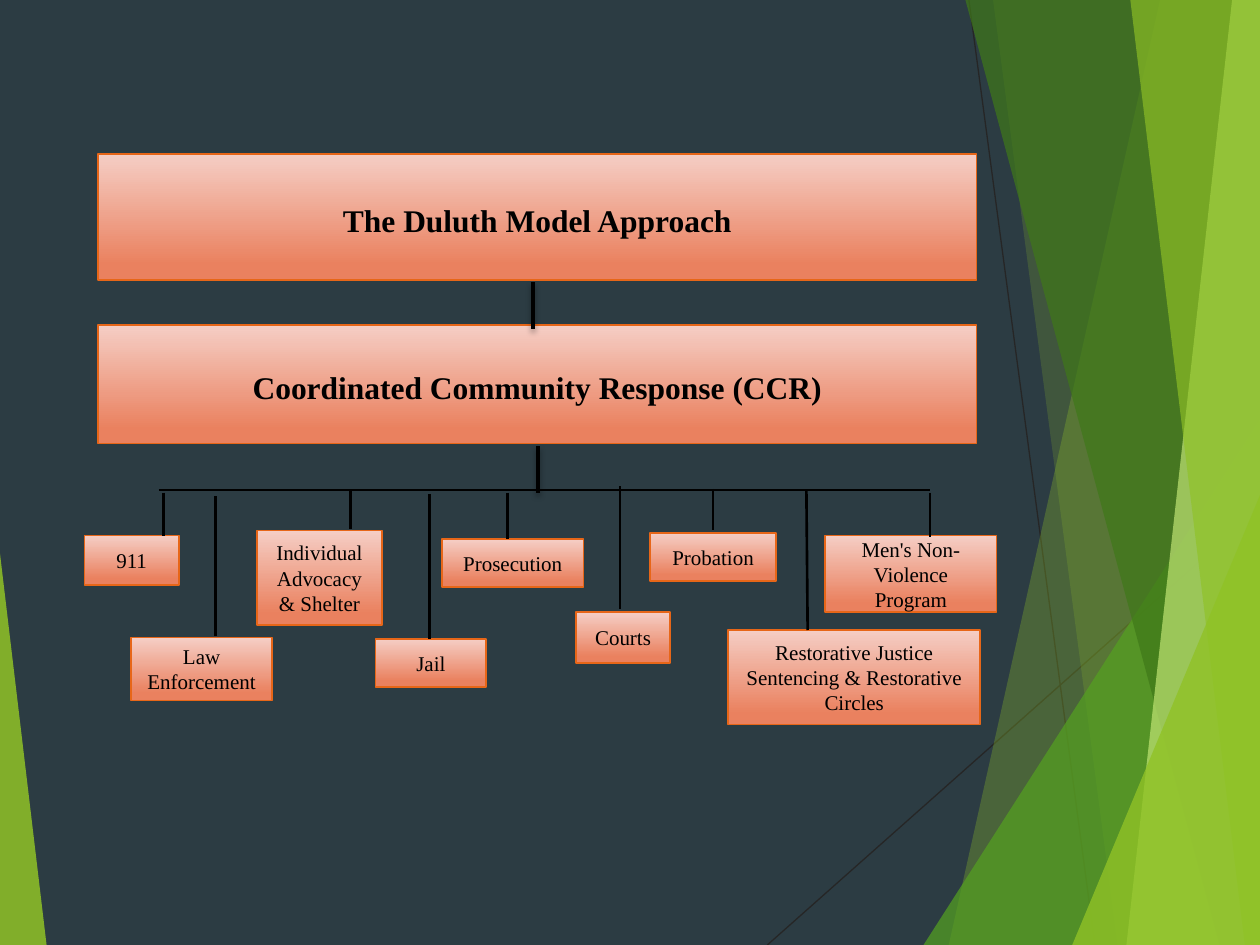
from dataclasses import dataclass

from lxml.etree import SubElement
from pptx import Presentation
from pptx.dml.color import RGBColor
from pptx.enum.shapes import MSO_CONNECTOR, MSO_SHAPE
from pptx.enum.text import MSO_ANCHOR, PP_ALIGN
from pptx.oxml.ns import qn
from pptx.util import Inches, Pt

COLORS = {
    "background": "2C3C43",
    "hairline": "262626",
    "lime": "90C226",
    "green": "54A021",
    "forest": "3F7819",
    "pale": "C0E474",
    "box_top": "F5CEC5",
    "box_bottom": "EA815F",
    "box_edge": "E76618",
    "black": "000000",
}
FONT = "Times New Roman"
TOP, RIGHT, BOTTOM = -0.01, 10, 7.5


@dataclass
class Blade:
    top_x: float
    bottom_x: float
    color: str
    alpha: int


@dataclass
class Corner:
    left: float
    top: float
    width: float
    apex: float
    color: str
    alpha: int


@dataclass
class Box:
    text: str
    left: float
    top: float
    width: float
    height: float
    heading: bool = False


@dataclass
class Line:
    x1: float
    y1: float
    x2: float
    y2: float
    width: float = 1.5
    color: str = "black"
    shadow: bool = False


BACK_LINES = [
    Line(7.69, 0, 8.69, 7.5, 0.75, "hairline"),
    Line(10, 4.03, 6.09, 7.5, 0.75, "hairline"),
]
DECOR = [
    Blade(9.21, 7.53, "lime", 30),
    Blade(7.88, 8.87, "lime", 20),
    Corner(7.33, 3.33, 2.67, 1, "green", 72),
    Blade(7.66, 9.68, "forest", 70),
    Blade(9.78, 8.94, "pale", 70),
    Blade(8.97, 9.88, "lime", 65),
    Corner(8.51, 3.93, 1.49, 1, "lime", 80),
    Corner(0, 4.39, 0.37, 0, "lime", 85),
]
HEADINGS = [
    Box("The Duluth Model Approach", 0.78, 1.22, 6.97, 1, True),
    Box("Coordinated Community Response (CCR)", 0.78, 2.58, 6.97, 0.94, True),
]
TRUNK = [
    Line(4.23, 2.24, 4.23, 2.61, 2, shadow=True),
    Line(4.27, 3.54, 4.27, 3.91, 2, shadow=True),
    Line(1.26, 3.89, 7.38, 3.89),
]
AGENCIES = [
    Box("911", 0.67, 4.25, 0.75, 0.39),
    Box("Law Enforcement", 1.04, 5.06, 1.12, 0.5),
    Box("Individual Advocacy & Shelter", 2.04, 4.21, 0.99, 0.75),
    Box("Jail", 2.98, 5.07, 0.88, 0.38),
    Box("Prosecution", 3.51, 4.28, 1.12, 0.38),
    Box("Courts", 4.57, 4.86, 0.75, 0.4),
    Box("Probation", 5.16, 4.23, 1, 0.38),
    Box("Restorative Justice Sentencing & Restorative Circles", 5.78, 5, 2, 0.75),
    Box("Men's Non-Violence Program", 6.55, 4.25, 1.36, 0.61),
]
BRANCHES = [
    Line(1.3, 3.91, 1.3, 4.25),
    Line(1.71, 3.94, 1.71, 5.05),
    Line(2.78, 3.89, 2.78, 4.2),
    Line(3.41, 3.92, 3.41, 5.07),
    Line(4.03, 3.91, 4.03, 4.28),
    Line(4.92, 3.86, 4.92, 4.83),
    Line(5.66, 3.88, 5.66, 4.21),
    Line(6.4, 3.89, 6.41, 5),
    Line(7.38, 3.91, 7.38, 4.26),
]


def rgb(name: str) -> RGBColor:
    return RGBColor.from_string(COLORS[name])


def set_alpha(clr, percent: int) -> None:
    SubElement(clr, qn("a:alpha"), val=str(percent * 1000))


def draw_line(s, line: Line) -> None:
    c = s.shapes.add_connector(
        MSO_CONNECTOR.STRAIGHT,
        Inches(line.x1), Inches(line.y1), Inches(line.x2), Inches(line.y2),
    )
    c.line.color.rgb = rgb(line.color)
    c.line.width = Pt(line.width)
    effects = SubElement(c._element.spPr, qn("a:effectLst"))
    if line.shadow:
        shadow = SubElement(
            effects, qn("a:outerShdw"), blurRad=str(Pt(3)), dist=str(Pt(2)),
            dir="5400000", rotWithShape="0",
        )
        set_alpha(SubElement(shadow, qn("a:srgbClr"), val=COLORS["black"]), 35)


def draw_decor(s, item: Blade | Corner) -> None:
    if isinstance(item, Blade):
        points = [(RIGHT, TOP), (RIGHT, BOTTOM), (item.bottom_x, BOTTOM)]
        fb = s.shapes.build_freeform(Inches(item.top_x), Inches(TOP))
        fb.add_line_segments([(Inches(x), Inches(y)) for x, y in points])
        sp = fb.convert_to_shape()
    else:
        sp = s.shapes.add_shape(
            MSO_SHAPE.ISOSCELES_TRIANGLE, Inches(item.left), Inches(item.top),
            Inches(item.width), Inches(BOTTOM - item.top),
        )
        sp.adjustments[0] = item.apex
    sp.shadow.inherit = False
    sp.fill.solid()
    sp.fill.fore_color.rgb = rgb(item.color)
    set_alpha(sp._element.spPr.find(".//" + qn("a:srgbClr")), item.alpha)
    sp.line.fill.background()


def draw_box(s, box: Box) -> None:
    sp = s.shapes.add_shape(
        MSO_SHAPE.FLOWCHART_PROCESS, Inches(box.left), Inches(box.top),
        Inches(box.width), Inches(box.height),
    )
    sp.shadow.inherit = False
    sp.fill.gradient()
    sp.fill.gradient_angle = 270
    stops = zip(sp.fill.gradient_stops, (0, 0.88), ("box_top", "box_bottom"))
    for stop, position, color in stops:
        stop.position = position
        stop.color.rgb = rgb(color)
    sp.line.color.rgb = rgb("box_edge")
    sp.line.width = Pt(1)
    tf = sp.text_frame
    tf.text = box.text
    tf.word_wrap = True
    tf.vertical_anchor = MSO_ANCHOR.MIDDLE
    p = tf.paragraphs[0]
    p.alignment = PP_ALIGN.CENTER
    if box.heading:
        p.line_spacing = 1.15
        p.space_after = Pt(10)
    r = p.runs[0]
    r.font.name = FONT
    r.font.size = Pt(18 if box.heading else 12)
    r.font.bold = box.heading
    r.font.color.rgb = rgb("black")


def main() -> None:
    prs = Presentation()
    prs.slide_width, prs.slide_height = Inches(10), Inches(7.5)
    s = prs.slides.add_slide(prs.slide_layouts[6])
    s.background.fill.solid()
    s.background.fill.fore_color.rgb = rgb("background")
    layers = [
        (draw_line, BACK_LINES),
        (draw_decor, DECOR),
        (draw_box, HEADINGS),
        (draw_line, TRUNK),
        (draw_box, AGENCIES),
        (draw_line, BRANCHES),
    ]
    for draw, items in layers:
        for item in items:
            draw(s, item)
    prs.save("out.pptx")


if __name__ == "__main__":
    main()
